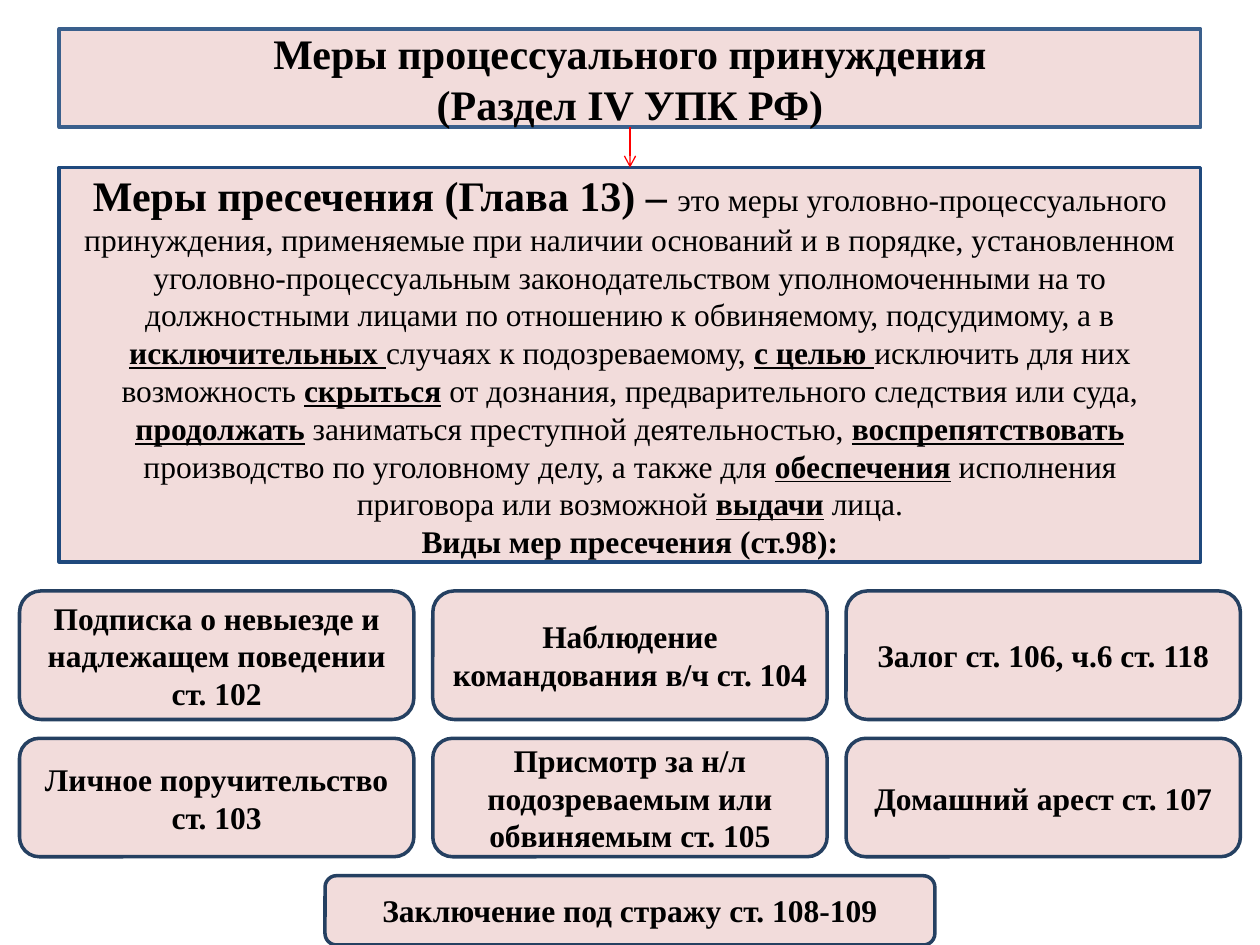
from dataclasses import dataclass
from lxml import etree
from pptx import Presentation
from pptx import util as u
from pptx.dml.color import RGBColor
from pptx.enum import shapes, text
from pptx.oxml.ns import qn


@dataclass(frozen=True)
class Theme:
    font: str = "Times New Roman"
    ink: str = "000000"
    fill: str = "F2DCDB"
    head: str = "3A5F8C"
    frame: str = "1F497D"
    card: str = "254061"
    arrow: str = "FF0000"
    big: int = 24
    small: int = 18
    edge: float = 2
    thin: float = 0.75


T = Theme()
HEAD = ["Меры процессуального принуждения", "(Раздел IV УПК РФ)"]
LEAD = "Меры пресечения (Глава 13) – "
BODY = (
    "это меры уголовно-процессуального принуждения, применяемые при наличии "
    "оснований и в порядке, установленном уголовно-процессуальным "
    "законодательством уполномоченными на то должностными лицами по отношению "
    "к обвиняемому, подсудимому, а в *исключительных *случаях к "
    "подозреваемому, *с целью *исключить для них возможность *скрыться* от "
    "дознания, предварительного следствия или суда, *продолжать* заниматься "
    "преступной деятельностью, *воспрепятствовать *производство по уголовному "
    "делу, а также для *обеспечения* исполнения приговора или возможной "
    "*выдачи* лица."
)
KINDS = "Виды мер пресечения (ст.98):"
CARDS = [
    ["Подписка о невыезде и надлежащем поведении ст. 102",
     "Наблюдение командования в/ч ст. 104",
     "Залог ст. 106, ч.6 ст. 118"],
    ["Личное поручительство ст. 103",
     "Присмотр за н/л подозреваемым или обвиняемым ст. 105",
     "Домашний арест ст. 107"],
]
LAST = "Заключение под стражу ст. 108-109"

WIDE, HIGH = 10, 7.5
SIDE, GAP = 0.47, 0.15
CELL = 3.13
ROWS = [(4.69, 1.02), (5.86, 0.94)]
HEAD_TOP, HEAD_HIGH = 0.23, 0.78
BODY_TOP, BODY_HIGH = 1.33, 3.13
LAST_WIDE, LAST_HIGH = 4.84, 0.55


def color(code):
    return RGBColor.from_string(code)


def write(para, words, size=T.small, bold=True, under=False):
    para.alignment = text.PP_ALIGN.CENTER
    run = para.add_run()
    run.text = words
    font = run.font
    font.name, font.size = T.font, u.Pt(size)
    font.bold, font.underline = bold, under
    font.color.rgb = color(T.ink)


def style(shape, line):
    shape.fill.solid()
    shape.fill.fore_color.rgb = color(T.fill)
    shape.line.color.rgb = color(line)
    shape.line.width = u.Pt(T.edge)
    frame = shape.text_frame
    frame.word_wrap = True
    frame.auto_size = text.MSO_AUTO_SIZE.NONE
    frame.vertical_anchor = text.MSO_ANCHOR.MIDDLE
    return frame


def box(slide, area, line=T.card, kind=shapes.MSO_SHAPE.ROUNDED_RECTANGLE):
    shape = slide.shapes.add_shape(kind, *map(u.Inches, area))
    shape.shadow.inherit = False
    return style(shape, line)


def title(slide):
    shape = slide.shapes.title
    shape.left, shape.top = u.Inches(SIDE), u.Inches(HEAD_TOP)
    shape.width, shape.height = u.Inches(WIDE - 2 * SIDE), u.Inches(HEAD_HIGH)
    geom = etree.SubElement(shape.element.spPr, qn("a:prstGeom"), prst="roundRect")
    etree.SubElement(geom, qn("a:avLst"))
    frame = style(shape, T.head)
    write(frame.paragraphs[0], HEAD[0], size=T.big)
    write(frame.add_paragraph(), HEAD[1], size=T.big)


def body(slide):
    area = SIDE, BODY_TOP, WIDE - 2 * SIDE, BODY_HIGH
    frame = box(slide, area, T.frame, shapes.MSO_SHAPE.RECTANGLE)
    para = frame.paragraphs[0]
    write(para, LEAD, size=T.big)
    for i, part in enumerate(BODY.split("*")):
        strong = i % 2 == 1
        write(para, part, bold=strong, under=strong)
    write(frame.add_paragraph(), KINDS)


def arrow(slide):
    ends = WIDE / 2, HEAD_TOP + HEAD_HIGH, WIDE / 2, BODY_TOP
    link = slide.shapes.add_connector(
        shapes.MSO_CONNECTOR.STRAIGHT, *map(u.Inches, ends))
    link.line.color.rgb = color(T.arrow)
    link.line.width = u.Pt(T.thin)
    etree.SubElement(link.line._get_or_add_ln(), qn("a:tailEnd"), type="arrow")
    etree.SubElement(link.element.spPr, qn("a:effectLst"))


def cards(slide):
    left = (WIDE - 3 * CELL - 2 * GAP) / 2
    for (top, high), names in zip(ROWS, CARDS):
        for col, name in enumerate(names):
            area = left + col * (CELL + GAP), top, CELL, high
            write(box(slide, area).paragraphs[0], name)
    area = (WIDE - LAST_WIDE) / 2, HIGH - LAST_HIGH, LAST_WIDE, LAST_HIGH
    write(box(slide, area).paragraphs[0], LAST)


def main():
    deck = Presentation()
    deck.slide_width, deck.slide_height = u.Inches(WIDE), u.Inches(HIGH)
    slide = deck.slides.add_slide(deck.slide_layouts[5])
    title(slide)
    body(slide)
    arrow(slide)
    cards(slide)
    deck.save("out.pptx")


if __name__ == "__main__":
    main()
